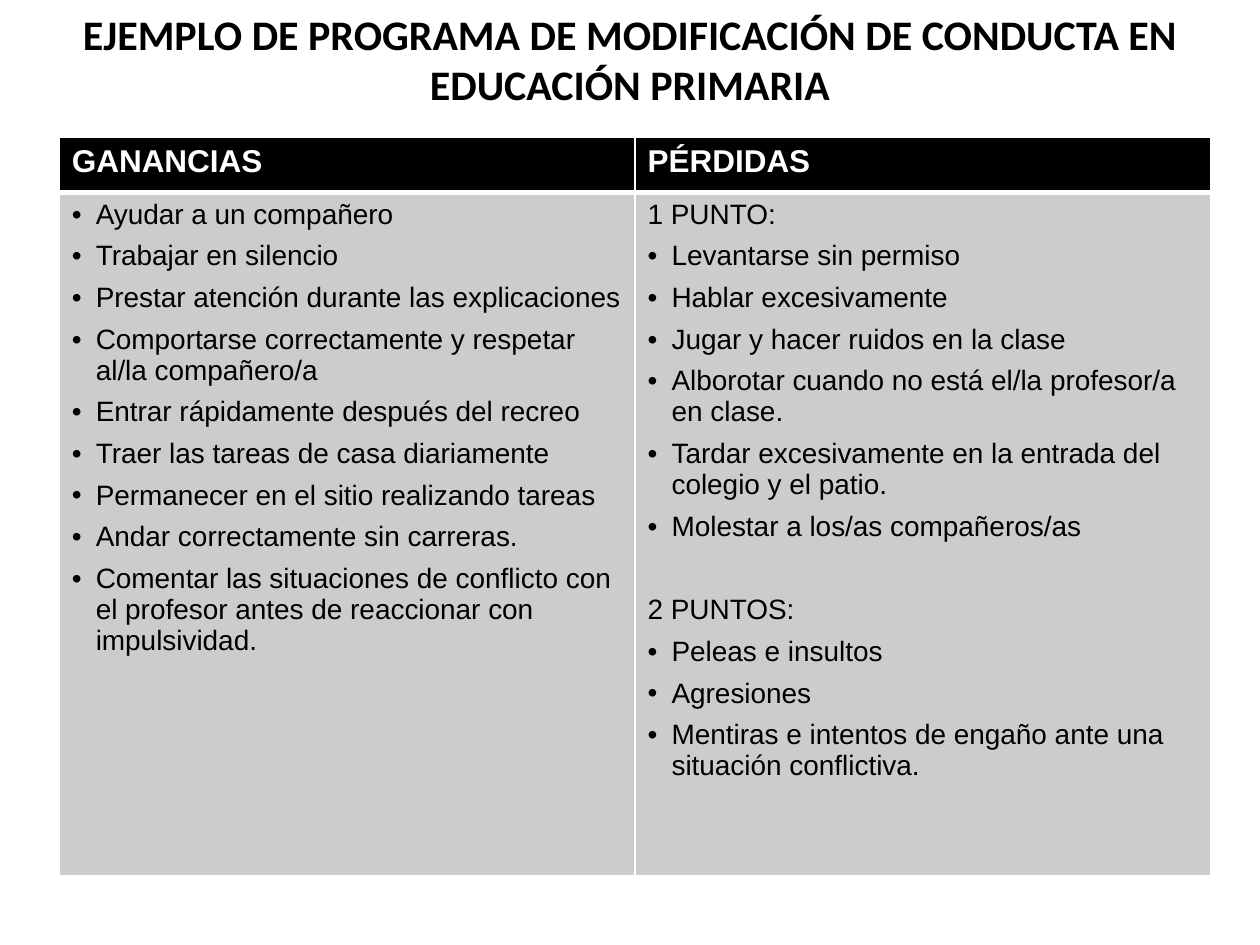
from lxml.etree import SubElement
from pptx import Presentation
from pptx.dml.color import RGBColor
from pptx.enum.text import MSO_ANCHOR, PP_ALIGN
from pptx.oxml.ns import qn
from pptx.util import Inches, Pt

TITLE = "EJEMPLO DE PROGRAMA DE MODIFICACIÓN DE CONDUCTA EN EDUCACIÓN PRIMARIA"
# One entry per column: heading and groups of (label, items)
COLUMNS = [
    ("GANANCIAS", [
        (None, [
            "Ayudar a un compañero",
            "Trabajar en silencio",
            "Prestar atención durante las explicaciones",
            "Comportarse correctamente y respetar al/la compañero/a",
            "Entrar rápidamente después del recreo",
            "Traer las tareas de casa diariamente",
            "Permanecer en el sitio realizando tareas",
            "Andar correctamente sin carreras.",
            "Comentar las situaciones de conflicto con el profesor antes de "
            "reaccionar con impulsividad.",
        ]),
    ]),
    ("PÉRDIDAS", [
        ("1 PUNTO:", [
            "Levantarse sin permiso",
            "Hablar excesivamente",
            "Jugar y hacer ruidos en la clase",
            "Alborotar cuando no está el/la profesor/a en clase.",
            "Tardar excesivamente en la entrada del colegio y el patio.",
            "Molestar a los/as compañeros/as",
        ]),
        ("2 PUNTOS:", [
            "Peleas e insultos",
            "Agresiones",
            "Mentiras e intentos de engaño ante una situación conflictiva.",
        ]),
    ]),
]
ROW_HEIGHTS = (0.44, 5.42)
COL_WIDTH = 4.57
INDENT = 0.19
ITEM_GAP, GROUP_GAP = 6, 30
THIN, THICK = 1, 3

TITLE_FONT = dict(name="Calibri", size=Pt(24), bold=True)
HEAD_FONT = dict(name="Arial", size=Pt(18), bold=True)
BODY_FONT = dict(name="Arial", size=Pt(16), bold=False)


def rgb(color):
    return RGBColor.from_string(color)


def write(p, text, font, color):
    r = p.add_run()
    r.text = text
    for key, value in font.items():
        setattr(r.font, key, value)
    r.font.color.rgb = rgb(color)


def set_indent(p, bullet):
    """Give a paragraph its hanging indent, with or without a bullet."""
    pPr = p._p.get_or_add_pPr()
    pPr.set("marL", str(Inches(INDENT)))
    pPr.set("indent", str(-Inches(INDENT)))
    if bullet:
        SubElement(pPr, qn("a:buFont"), typeface="Arial")
        SubElement(pPr, qn("a:buChar"), char="•")
    else:
        SubElement(pPr, qn("a:buNone"))


def style_cell(cell, fill, top, bottom):
    """Draw white borders of the given widths, then fill the cell."""
    tcPr = cell._tc.get_or_add_tcPr()
    for side, width in dict(L=THIN, R=THIN, T=top, B=bottom).items():
        ln = SubElement(tcPr, qn(f"a:ln{side}"), w=str(Pt(width)))
        SubElement(SubElement(ln, qn("a:solidFill")), qn("a:srgbClr"), val="FFFFFF")
    cell.fill.solid()
    cell.fill.fore_color.rgb = rgb(fill)


def fill_body(tf, groups):
    p = None
    for label, items in groups:
        lines = [(label, False)] if label else []
        lines += [(item, True) for item in items]
        for i, (text, bullet) in enumerate(lines):
            first = p is None
            p = tf.paragraphs[0] if first else tf.add_paragraph()
            set_indent(p, bullet)
            if not first:
                p.space_before = Pt(ITEM_GAP if i else GROUP_GAP)
            write(p, text, BODY_FONT, "000000")


prs = Presentation()
prs.slide_width, prs.slide_height = Inches(10), Inches(7.5)
s = prs.slides.add_slide(prs.slide_layouts[6])

tf = s.shapes.add_textbox(0, 0, prs.slide_width, Inches(0.93)).text_frame
tf.word_wrap = True
tf.vertical_anchor = MSO_ANCHOR.MIDDLE
tf.paragraphs[0].alignment = PP_ALIGN.CENTER
write(tf.paragraphs[0], TITLE, TITLE_FONT, "000000")

table = s.shapes.add_table(
    len(ROW_HEIGHTS), len(COLUMNS), Inches(0.47), Inches(1.09),
    Inches(COL_WIDTH * len(COLUMNS)), Inches(sum(ROW_HEIGHTS))).table
for row, height in zip(table.rows, ROW_HEIGHTS):
    row.height = Inches(height)
for c, (heading, groups) in enumerate(COLUMNS):
    table.columns[c].width = Inches(COL_WIDTH)
    head, body = table.cell(0, c), table.cell(1, c)
    style_cell(head, "000000", THIN, THICK)
    style_cell(body, "CCCCCC", THICK, THIN)
    write(head.text_frame.paragraphs[0], heading, HEAD_FONT, "FFFFFF")
    fill_body(body.text_frame, groups)

prs.save("out.pptx")
